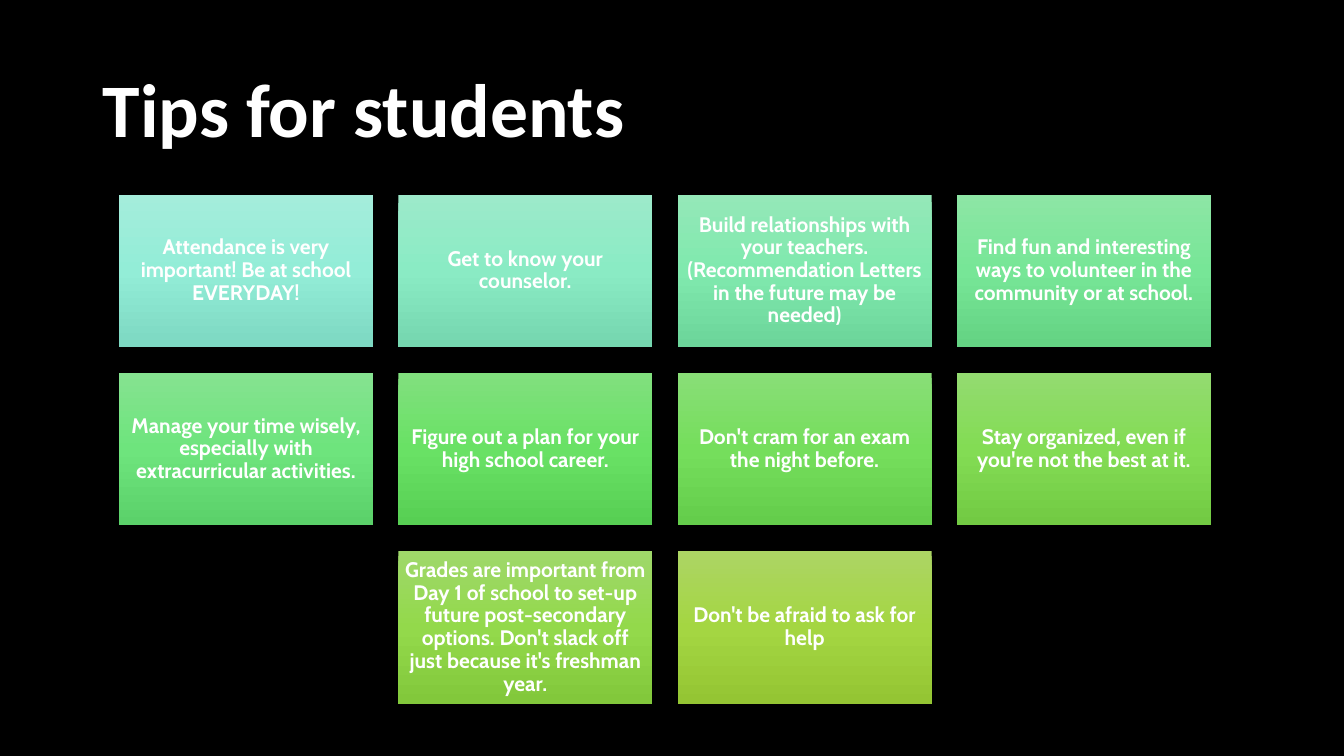
from copy import deepcopy
from dataclasses import dataclass

from pptx import Presentation
from pptx.dml.color import RGBColor
from pptx.enum import dml, shapes, text
from pptx.oxml import ns
from pptx.util import Inches, Pt

BLACK = RGBColor(0x00, 0x00, 0x00)
WHITE = RGBColor(0xFF, 0xFF, 0xFF)
AQUA = tuple(map(RGBColor.from_string, ("A4EDDB", "93EDD7", "7DD8C2")))
MINT = tuple(map(RGBColor.from_string, ("9CEACA", "8AEBC4", "75D6AF")))
JADE = tuple(map(RGBColor.from_string, ("94E8B8", "80E9AE", "6CD59A")))
SPRING = tuple(map(RGBColor.from_string, ("8DE6A5", "77E697", "64D383")))
FERN = tuple(map(RGBColor.from_string, ("85E390", "6EE47D", "5BD16A")))
GREEN = tuple(map(RGBColor.from_string, ("81E07E", "69E165", "57CF53")))
GRASS = tuple(map(RGBColor.from_string, ("89DE77", "75DE5C", "64CD4B")))
LEAF = tuple(map(RGBColor.from_string, ("93DB70", "83DC54", "72CA43")))
LIME = tuple(map(RGBColor.from_string, ("9FD86A", "93D94B", "82C83B")))
OLIVE = tuple(map(RGBColor.from_string, ("ACD564", "A4D642", "94C533")))

COLS = 4
LEFT, TOP = 1.18, 1.93
WIDTH, HEIGHT = 2.52, 1.51
STEP_X, STEP_Y = 2.77, 1.77
INSET = Inches(0.06)


@dataclass
class Tip:
    words: str
    shades: tuple[RGBColor, ...]


TIPS = [
    Tip("Attendance is very important! Be at school EVERYDAY!", AQUA),
    Tip("Get to know your counselor.", MINT),
    Tip("Build relationships with your teachers. "
        "(Recommendation Letters in the future may be needed)", JADE),
    Tip("Find fun and interesting ways to volunteer in the community or at school.", SPRING),
    Tip("Manage your time wisely, especially with extracurricular activities.", FERN),
    Tip("Figure out a plan for your high school career.", GREEN),
    Tip("Don't cram for an exam the night before.", GRASS),
    Tip("Stay organized, even if you're not the best at it.", LEAF),
    Tip("Grades are important from Day 1 of school to set-up future post-secondary "
        "options. Don't slack off just because it's freshman year.", LIME),
    Tip("Don't be afraid to ask for help", OLIVE),
]


def write(shape, words: str, face: str, size: int, align) -> None:
    frame = shape.text_frame
    frame.text = words
    frame.word_wrap = True
    frame.auto_size = text.MSO_AUTO_SIZE.NONE
    frame.vertical_anchor = text.MSO_ANCHOR.MIDDLE
    line = frame.paragraphs[0]
    line.alignment = align
    line.line_spacing = 0.9
    font = line.runs[0].font
    font.name, font.size, font.bold = face, Pt(size), True
    font.color.rgb = WHITE


def shade(shape, shades: tuple[RGBColor, ...]) -> None:
    fill = shape.fill
    fill.gradient()
    fill.gradient_angle = 270
    stops = shape._element.spPr.find(ns.qn("a:gradFill")).find(ns.qn("a:gsLst"))
    stops.insert(1, deepcopy(stops[0]))
    for stop, place, color in zip(fill.gradient_stops, (0, 0.5, 1), shades):
        stop.position = place
        stop.color.rgb = color


def draw_tip(slide, tip: Tip, left: float, top: float) -> None:
    card = slide.shapes.add_shape(
        shapes.MSO_SHAPE.RECTANGLE,
        Inches(left), Inches(top), Inches(WIDTH), Inches(HEIGHT))
    card.shadow.inherit = False
    card.line.fill.background()
    shade(card, tip.shades)
    write(card, tip.words, "Cabin", 15, text.PP_ALIGN.CENTER)
    frame = card.text_frame
    frame.margin_left = frame.margin_right = INSET
    frame.margin_top = frame.margin_bottom = INSET


def main() -> None:
    deck = Presentation()
    deck.slide_width, deck.slide_height = Inches(13.33), Inches(7.5)
    slide = deck.slides.add_slide(deck.slide_layouts[5])
    back = slide.background.fill
    back.solid()
    back.fore_color.rgb = BLACK

    title = slide.shapes.title
    title.left, title.top = Inches(0.92), Inches(0.4)
    title.width, title.height = Inches(11.5), Inches(1.45)
    write(title, "Tips for students", "Calibri", 54, text.PP_ALIGN.LEFT)

    for start in range(0, len(TIPS), COLS):
        row = TIPS[start:start + COLS]
        left = LEFT + (COLS - len(row)) / 2 * STEP_X
        top = TOP + start // COLS * STEP_Y
        for col, tip in enumerate(row):
            draw_tip(slide, tip, left + col * STEP_X, top)

    deck.save("out.pptx")


if __name__ == "__main__":
    main()
